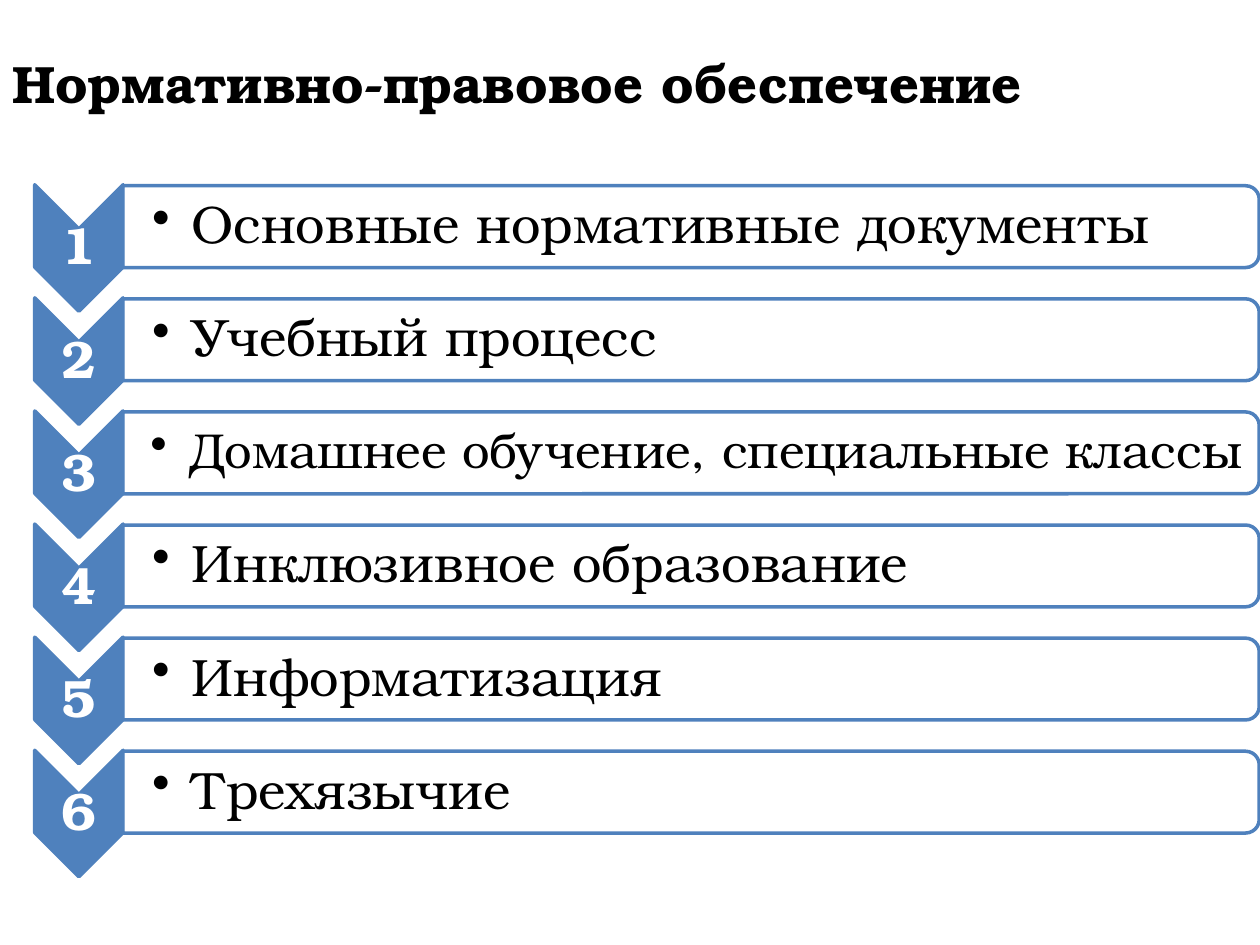
from lxml.etree import SubElement
from pptx import Presentation
from pptx.dml.color import RGBColor
from pptx.enum.shapes import MSO_SHAPE
from pptx.enum.text import MSO_ANCHOR, PP_ALIGN
from pptx.oxml.ns import qn
from pptx.util import Cm, Pt

COLORS = {"accent": "4F81BD", "paper": "FFFFFF", "ink": "000000"}
TOPICS = [
    ("Основные нормативные документы", 30),
    ("Учебный процесс", 30),
    ("Домашнее обучение, специальные классы", 28),
    ("Инклюзивное образование", 30),
    ("Информатизация", 30),
    ("Трехязычие", 30),
]
STEP = 2.28
CHEVRON_X, CHEVRON_Y = 1.59, 5.0
BAR_X, BAR_Y = 13.93, 4.57


def apply(target, formats):
    for name, value in formats.items():
        setattr(target, name, value)


class TopicSlide:
    """Draws a heading and numbered topic rows in one shared style."""

    font_name = "TeX Gyre Bonum"

    def __init__(self, slide):
        self.slide = slide

    def color(self, key):
        return RGBColor.from_string(COLORS[key])

    def turned_shape(self, kind, center_x, center_y, length, breadth, fill, opacity=100):
        shape = self.slide.shapes.add_shape(
            kind, Cm(center_x - length / 2), Cm(center_y - breadth / 2),
            Cm(length), Cm(breadth))
        shape.rotation = 90
        shape.shadow.inherit = False
        shape.fill.solid()
        shape.fill.fore_color.rgb = self.color(fill)
        if opacity < 100:
            tint = shape.fill._xPr.find(f"{qn('a:solidFill')}/{qn('a:srgbClr')}")
            SubElement(tint, qn("a:alpha"), val=str(opacity * 1000))
        shape.line.color.rgb = self.color("accent")
        shape.line.width = Pt(2)

    def text(self, wording, left, top, width, height, size=30, ink="ink",
             bold=False, frame_format=None, paragraph_format=None, bullet=False):
        frame = self.slide.shapes.add_textbox(
            Cm(left), Cm(top), Cm(width), Cm(height)).text_frame
        apply(frame, {"word_wrap": True, **(frame_format or {})})
        paragraph = frame.paragraphs[0]
        paragraph.text = wording
        apply(paragraph, paragraph_format or {})
        if bullet:
            properties = paragraph._p.get_or_add_pPr()
            apply_indent = {"marL": Cm(0.79), "indent": -Cm(0.79)}
            for name, value in apply_indent.items():
                properties.set(name, str(int(value)))
            SubElement(properties, qn("a:buChar"), char="•")
        apply(paragraph.runs[0].font,
              {"name": self.font_name, "size": Pt(size), "bold": bold})
        paragraph.runs[0].font.color.rgb = self.color(ink)

    def topic_row(self, index, topic, size):
        offset = index * STEP
        tight = {"vertical_anchor": MSO_ANCHOR.MIDDLE, "margin_left": Cm(0.05),
                 "margin_right": Cm(0.05), "margin_top": Cm(0.05),
                 "margin_bottom": Cm(0.05)}
        self.turned_shape(MSO_SHAPE.CHEVRON, CHEVRON_X, CHEVRON_Y + offset,
                          2.55, 1.78, "accent")
        self.text(str(index + 1), 0.7, 4.62 + offset, 1.78, 0.76, ink="paper",
                  bold=True, frame_format=tight,
                  paragraph_format={"alignment": PP_ALIGN.CENTER, "line_spacing": 0.9})
        self.turned_shape(MSO_SHAPE.ROUND_2_SAME_RECTANGLE, BAR_X, BAR_Y + offset,
                          1.65, 22.91, "paper", opacity=90)
        self.text(topic, 2.48, 3.82 + offset, 22.83, 1.5, size=size,
                  frame_format={**tight, "margin_left": Cm(0.02 * size - 0.01)},
                  paragraph_format={"line_spacing": 0.9}, bullet=True)


def main():
    presentation = Presentation()
    apply(presentation, {"slide_width": Cm(25.4), "slide_height": Cm(19.05)})
    page = TopicSlide(presentation.slides.add_slide(presentation.slide_layouts[6]))
    for index, (topic, size) in enumerate(TOPICS):
        page.topic_row(index, topic, size)
    page.text("Нормативно-правовое обеспечение", 0, 0.91, 23.29, 1.55, bold=True)
    presentation.save("out.pptx")


if __name__ == "__main__":
    main()
